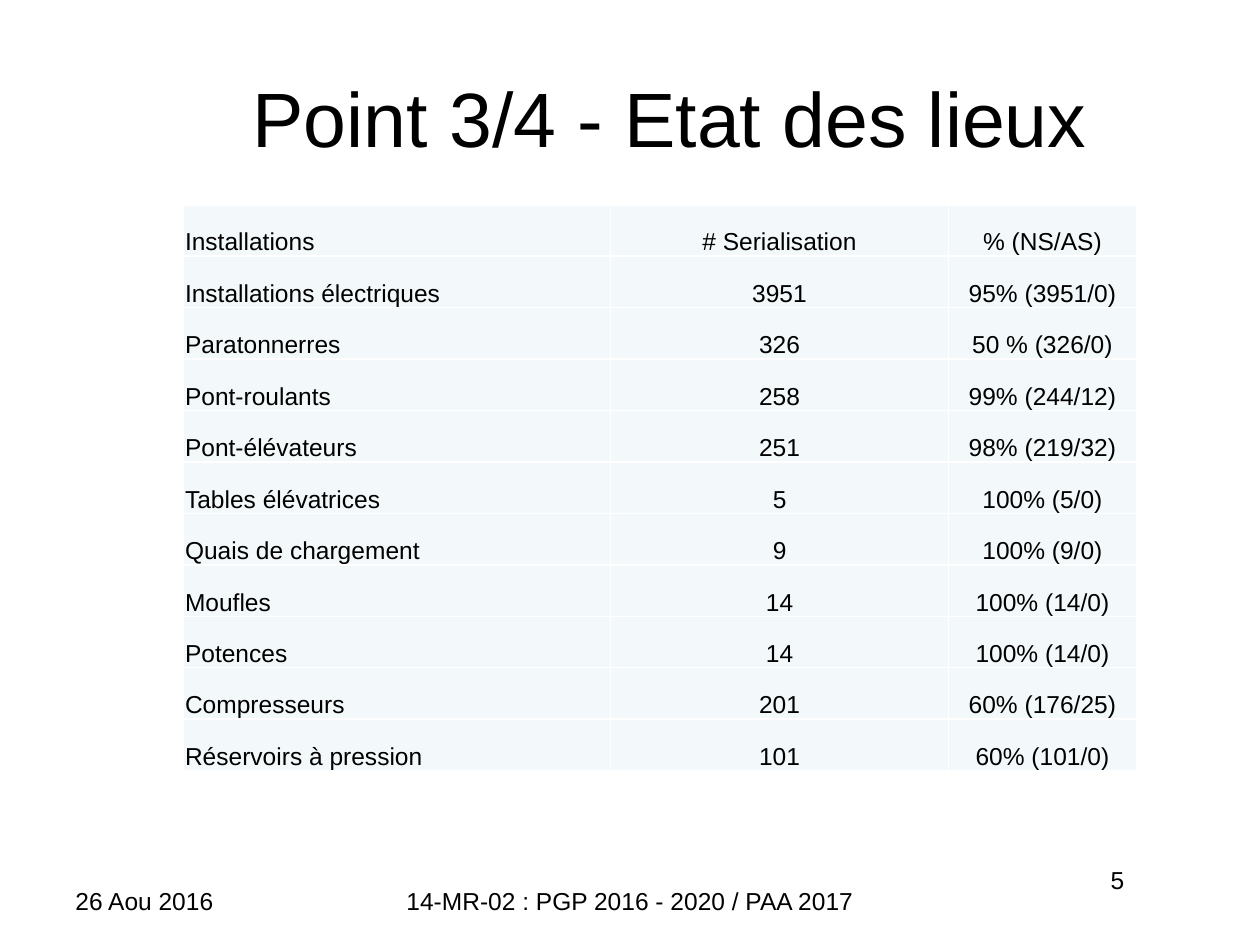
from lxml.etree import SubElement
from pptx import Presentation
from pptx.dml.color import RGBColor
from pptx.enum.text import MSO_ANCHOR as Anchor, PP_ALIGN as Align
from pptx.oxml.ns import qn
from pptx.util import Pt


def color(value):
    return RGBColor.from_string(value)


def write(frame, text, size=14, align=Align.LEFT, anchor=Anchor.TOP):
    frame.word_wrap = True
    frame.vertical_anchor = anchor
    paragraph = frame.paragraphs[0]
    paragraph.text = text
    paragraph.alignment = align
    paragraph.font.size = Pt(size)
    paragraph.font.name = "Arial"
    paragraph.font.color.rgb = color("000000")


presentation = Presentation()
presentation.slide_width, presentation.slide_height = Pt(720), Pt(540)
slide = presentation.slides.add_slide(presentation.slide_layouts[6])

text_boxes = [
    ("Point 3/4 - Etat des lieux", (82, 21.6, 602, 90),
     dict(size=44, align=Align.CENTER, anchor=Anchor.MIDDLE)),
    ("26 Aou 2016", (36, 502.5, 168, 26.5), {}),
    ("14-MR-02 : PGP 2016 - 2020 / PAA 2017", (224, 502.5, 272, 26.5),
     dict(align=Align.CENTER)),
    ("5", (516, 491, 133.5, 37.5), dict(align=Align.RIGHT)),
]
for text, box, text_format in text_boxes:
    shape = slide.shapes.add_textbox(*map(Pt, box))
    write(shape.text_frame, text, **text_format)

installations = [
    ("Installations", "# Serialisation", "% (NS/AS)"),
    ("Installations électriques", "3951", "95% (3951/0)"),
    ("Paratonnerres", "326", "50 % (326/0)"),
    ("Pont-roulants", "258", "99% (244/12)"),
    ("Pont-élévateurs", "251", "98% (219/32)"),
    ("Tables élévatrices", "5", "100% (5/0)"),
    ("Quais de chargement", "9", "100% (9/0)"),
    ("Moufles", "14", "100% (14/0)"),
    ("Potences", "14", "100% (14/0)"),
    ("Compresseurs", "201", "60% (176/25)"),
    ("Réservoirs à pression", "101", "60% (101/0)"),
]
column_widths = (244, 193, 107.5)
row_height = 29.4
table = slide.shapes.add_table(
    len(installations), len(column_widths), Pt(105), Pt(117),
    Pt(sum(column_widths)), Pt(row_height * len(installations))).table
for column, width in zip(table.columns, column_widths):
    column.width = Pt(width)

for row_index, values in enumerate(installations):
    table.rows[row_index].height = Pt(row_height)
    for column_index, value in enumerate(values):
        cell = table.cell(row_index, column_index)
        cell.margin_left = cell.margin_right = cell.margin_top = Pt(0.75)
        cell.margin_bottom = 0
        cell.vertical_anchor = Anchor.BOTTOM
        properties = cell._tc.get_or_add_tcPr()
        for side in ("lnL", "lnR", "lnT", "lnB"):
            border = SubElement(properties, qn(f"a:{side}"), w=str(Pt(1)))
            border_fill = SubElement(border, qn("a:solidFill"))
            SubElement(border_fill, qn("a:srgbClr"), val="FFFFFF")
        cell.fill.solid()
        cell.fill.fore_color.rgb = color("F3F9FA")
        write(cell.text_frame, value, anchor=Anchor.BOTTOM,
              align=Align.CENTER if column_index else Align.LEFT)

presentation.save("out.pptx")
